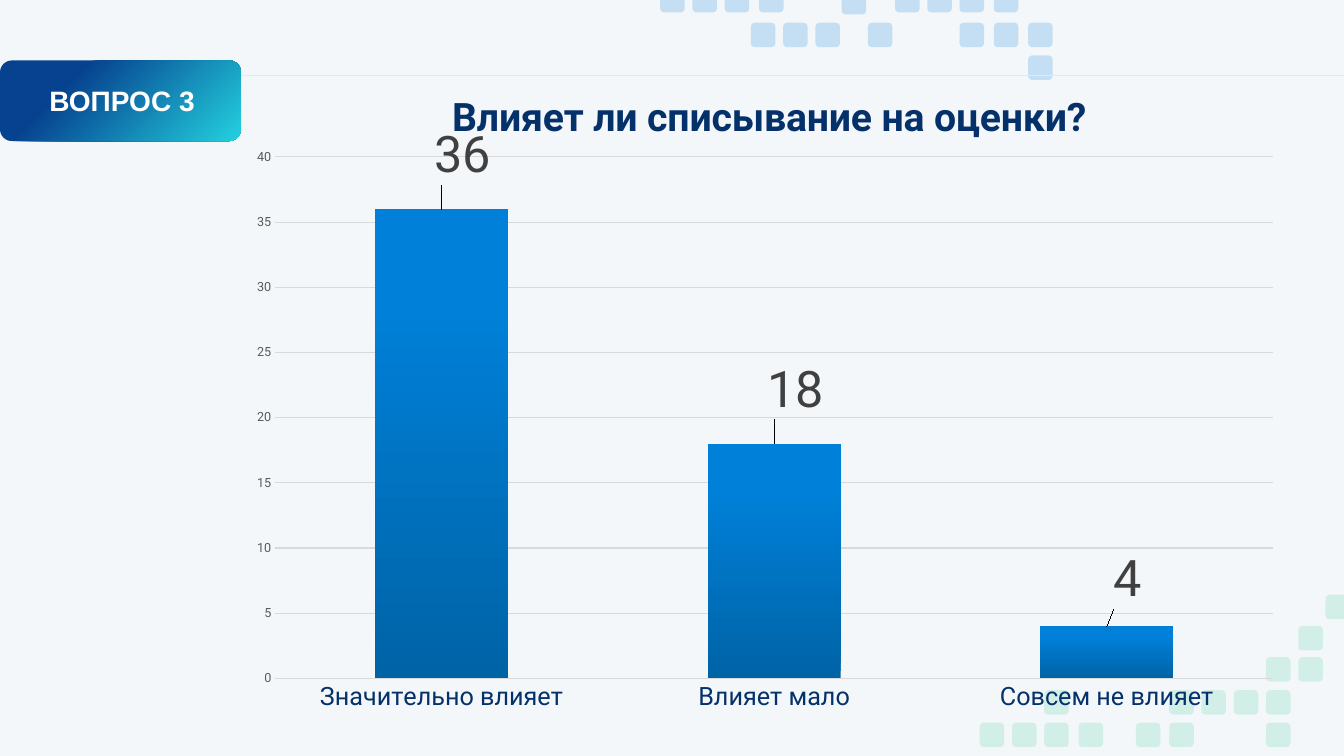
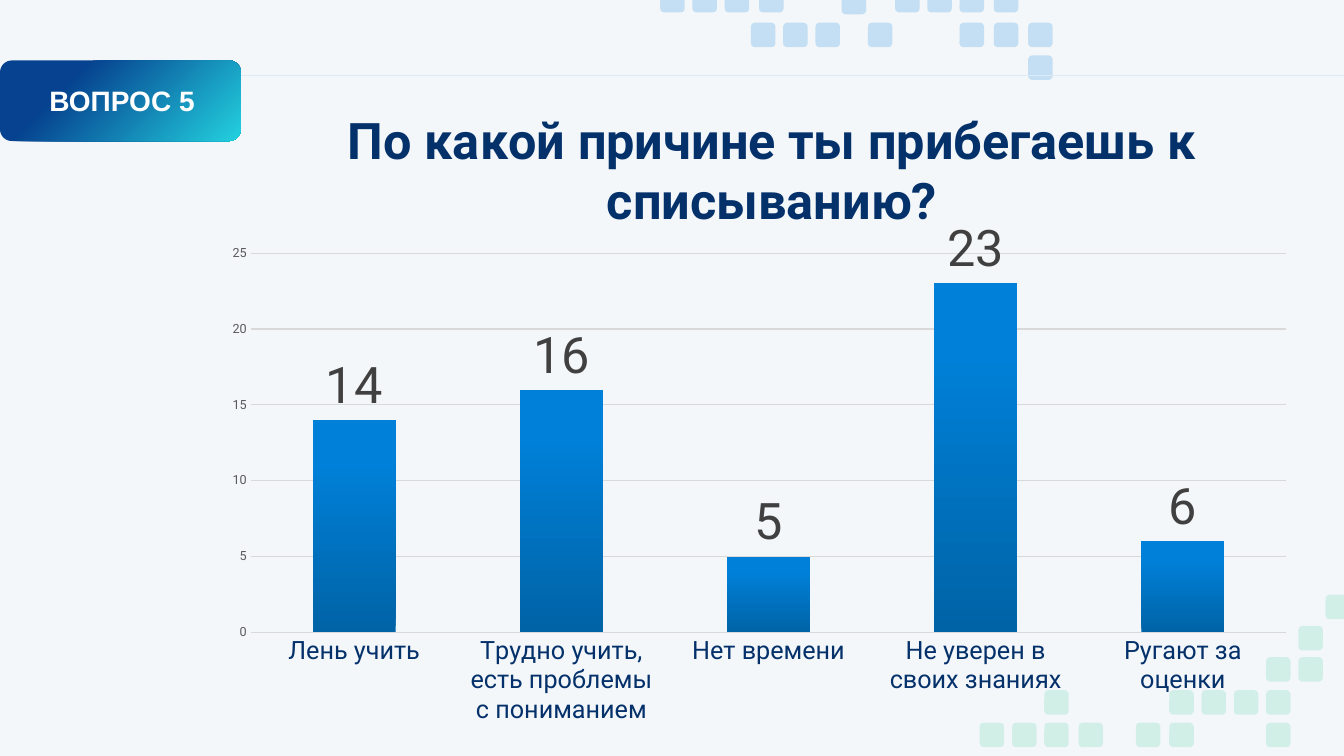
from pptx import Presentation
from pptx import oxml
from pptx import util as u
from pptx.chart import data as chart_data
from pptx.dml import color
from pptx.enum import chart as chart_enum, shapes, text
from pptx.oxml import ns

# Content
QUESTIONS = [
    {
        "tag": "ВОПРОС 3",
        "title": "Влияет ли списывание на оценки?",
        "title_size": 28,
        "title_at": {"x": 0.2, "y": 0.03},
        "answers": [("Значительно влияет", 36), ("Влияет мало", 18), ("Совсем не влияет", 4)],
        "label_shifts": [(0.02, -0.03), (0.02, -0.03), (0.02, -0.02)],
        "maximum": 40,
        "frame": (166.3, 46.1, 758.2, 471.6),
        "plot": {"x": 0.04, "y": 0.14, "w": 0.94, "h": 0.79},
    },
    {
        "tag": "ВОПРОС 5",
        "title": "По какой причине ты прибегаешь к списыванию?",
        "title_size": 36,
        "title_at": {"x": 0.12, "y": 0.05},
        "answers": [
            ("Лень учить", 14),
            ("Трудно учить, есть проблемы с пониманием", 16),
            ("Нет времени", 5),
            ("Не уверен в своих знаниях", 23),
            ("Ругают за оценки", 6),
        ],
        "label_shifts": [],
        "maximum": 25,
        "frame": (147.6, 45.4, 787, 483.8),
        "plot": {"x": 0.04, "y": 0.28, "w": 0.94, "h": 0.56},
    },
]

# Shared style
COLORS = {
    "background": "F3F7FA", "blue": "0883D7", "green": "4FD09F", "rule": "DEEBF7",
    "navy": "05316B", "white": "FFFFFF", "grid": "D9D9D9", "axis": "595959",
    "label": "404040", "text": "000000",
}
TAG_GRADIENT = [(28, "06428F"), (100, "23D1DF")]
BAR_GRADIENT = [(0, "0063A6"), (80, "0080D8"), (100, "0081D9")]
SQUARE = 17.5

# Squares: colour, top of the row, left edges
SQUARE_ROWS = [
    ("blue", -8.6, [471.6, 494.6, 517.7, 542.2, 639.4, 662.4, 685.4, 709.9]),
    ("blue", -7.2, [601.2]),
    ("blue", 16.2, [536.4, 559.4, 582.5, 619.9, 685.4, 709.9, 734.4]),
    ("blue", 39.6, [734.4]),
    ("green", 424.8, [946.8]),
    ("green", 447.1, [927.4]),
    ("green", 469.4, [904.3, 927.4]),
    ("green", 493, [745.9, 835.2, 858.2, 881.3, 904.3]),
    ("green", 516.2, [699.8, 722.9, 745.9, 770.4, 811.4, 835.2, 904.3]),
]


def rgb(name):
    return color.RGBColor.from_string(COLORS[name])


def points(*lengths):
    return [u.Pt(length) for length in lengths]


def set_font(font, size, color_name, name="Roboto", bold=False):
    font.size, font.name, font.bold = u.Pt(size), name, bold
    font.color.rgb = rgb(color_name)


def set_gradient(properties, stops, angle):
    """Replace the solid fill in shape properties by a linear gradient."""
    stop_xml = "".join(
        f'<a:gs pos="{position * 1000}"><a:srgbClr val="{value}"/></a:gs>'
        for position, value in stops
    )
    gradient = oxml.parse_xml(
        f'<a:gradFill {ns.nsdecls("a")} rotWithShape="1"><a:gsLst>{stop_xml}</a:gsLst>'
        f'<a:lin ang="{angle * 60000}" scaled="0"/></a:gradFill>'
    )
    solid = properties.find(ns.qn("a:solidFill"))
    properties.replace(solid, gradient)


def set_layout(parent, index, values, edge=True, inner=False):
    """Give a chart part a manual position, as fractions of the chart."""
    for old in parent.findall(ns.qn("c:layout")):
        parent.remove(old)
    target = '<c:layoutTarget val="inner"/>' if inner else ""
    modes = '<c:xMode val="edge"/><c:yMode val="edge"/>' if edge else ""
    numbers = "".join(f'<c:{key} val="{value}"/>' for key, value in values.items())
    parent.insert(index, oxml.parse_xml(
        f'<c:layout {ns.nsdecls("c")}><c:manualLayout>{target}{modes}{numbers}'
        "</c:manualLayout></c:layout>"
    ))


def no_fill():
    return oxml.parse_xml(
        f'<c:spPr {ns.nsdecls("c", "a")}><a:noFill/><a:ln><a:noFill/></a:ln></c:spPr>'
    )


def add_round_box(slide, left, top, width, height, color_name):
    box = slide.shapes.add_shape(
        shapes.MSO_SHAPE.ROUNDED_RECTANGLE, *points(left, top, width, height))
    box.shadow.inherit = False
    box.fill.solid()
    box.fill.fore_color.rgb = rgb(color_name)
    box.line.fill.background()
    return box


def build_layout(layout, slide):
    """Draw the common decoration once and move it to the layout."""
    layout.background.fill.solid()
    layout.background.fill.fore_color.rgb = rgb("background")
    for placeholder in list(layout.placeholders):
        placeholder.element.getparent().remove(placeholder.element)

    for color_name, top, lefts in SQUARE_ROWS:
        for left in lefts:
            square = add_round_box(slide, left, top, SQUARE, SQUARE, color_name)
            fill_color = square.element.spPr.find(ns.qn("a:solidFill"))[0]
            fill_color.append(oxml.parse_xml(f'<a:alpha {ns.nsdecls("a")} val="20000"/>'))

    rule = slide.shapes.add_connector(
        shapes.MSO_CONNECTOR.STRAIGHT, *points(60, 54, 960, 54))
    rule.line.color.rgb = rgb("rule")
    rule.line.width = u.Pt(0.82)
    rule.element.spPr.append(oxml.parse_xml(f'<a:effectLst {ns.nsdecls("a")}/>'))

    tag = add_round_box(slide, 0, 43.2, 172.1, 57.6, "navy")
    tag.adjustments[0] = 0.147
    set_gradient(tag.element.spPr, TAG_GRADIENT, 45)

    for shape in list(slide.shapes):
        layout.shapes.element.append(shape.element)


def add_tag_text(slide, wording):
    frame = slide.shapes.add_textbox(*points(35.3, 59.8, 552.2, 24.5)).text_frame
    frame.word_wrap = True
    frame.auto_size = text.MSO_AUTO_SIZE.SHAPE_TO_FIT_TEXT
    frame.margin_left = frame.margin_right = frame.margin_top = frame.margin_bottom = 0
    paragraph = frame.paragraphs[0]
    paragraph.text = wording
    set_font(paragraph.font, 20, "white", "Arial", True)


def add_answer_chart(slide, question):
    answers = chart_data.CategoryChartData()
    answers.categories = [answer for answer, _ in question["answers"]]
    answers.add_series("Series 1", [count for _, count in question["answers"]])
    chart = slide.shapes.add_chart(
        chart_enum.XL_CHART_TYPE.COLUMN_CLUSTERED, *points(*question["frame"]), answers).chart
    set_font(chart.font, 10, "text")
    chart.has_legend = False

    # Title
    chart.has_title = True
    paragraph = chart.chart_title.text_frame.paragraphs[0]
    paragraph.text = question["title"]
    set_font(paragraph.font, question["title_size"], "navy", bold=True)
    set_layout(chart.element.xpath("c:chart/c:title")[0], 1, question["title_at"])

    # Axes
    for axis, size, color_name in (
        (chart.category_axis, 18, "navy"), (chart.value_axis, 9, "axis"),
    ):
        set_font(axis.tick_labels.font, size, color_name)
        axis.major_tick_mark = axis.minor_tick_mark = chart_enum.XL_TICK_MARK.NONE
    chart.category_axis.format.line.color.rgb = rgb("grid")
    chart.category_axis.format.line.width = u.Pt(1)
    counts = chart.value_axis
    counts.minimum_scale, counts.maximum_scale, counts.major_unit = 0, question["maximum"], 5
    counts.format.line.fill.background()
    counts.major_gridlines.format.line.color.rgb = rgb("grid")
    counts.major_gridlines.format.line.width = u.Pt(0.75)

    # Columns
    plot = chart.plots[0]
    plot.gap_width = 150
    plot.vary_by_categories = False
    series = plot.series[0]
    series.format.fill.solid()
    series.format.fill.fore_color.rgb = rgb("blue")
    set_gradient(chart.element.xpath(".//c:ser/c:spPr")[0], BAR_GRADIENT, 270)

    # Value labels, some moved from their usual place
    labels = series.data_labels
    labels.show_value = True
    moved = [series.points[index].data_label for index in range(len(question["label_shifts"]))]
    for label in [labels, *moved]:
        set_font(label.font, 36, "label")
        label.position = chart_enum.XL_LABEL_POSITION.OUTSIDE_END
    for label, (x, y) in zip(chart.element.xpath(".//c:dLbl"), question["label_shifts"]):
        set_layout(label, 1, {"x": x, "y": y}, edge=False)

    # Plot position and clear backgrounds
    plot_area = chart.element.xpath("c:chart/c:plotArea")[0]
    set_layout(plot_area, 0, question["plot"], inner=True)
    plot_area.append(no_fill())
    chart.element.xpath("c:chart")[0].addnext(no_fill())


def main():
    presentation = Presentation()
    presentation.slide_width, presentation.slide_height = points(960, 540)
    layout = presentation.slide_layouts[6]
    for number, question in enumerate(QUESTIONS):
        slide = presentation.slides.add_slide(layout)
        if number == 0:
            build_layout(layout, slide)
        add_tag_text(slide, question["tag"])
        add_answer_chart(slide, question)
    presentation.save("out.pptx")


if __name__ == "__main__":
    main()
